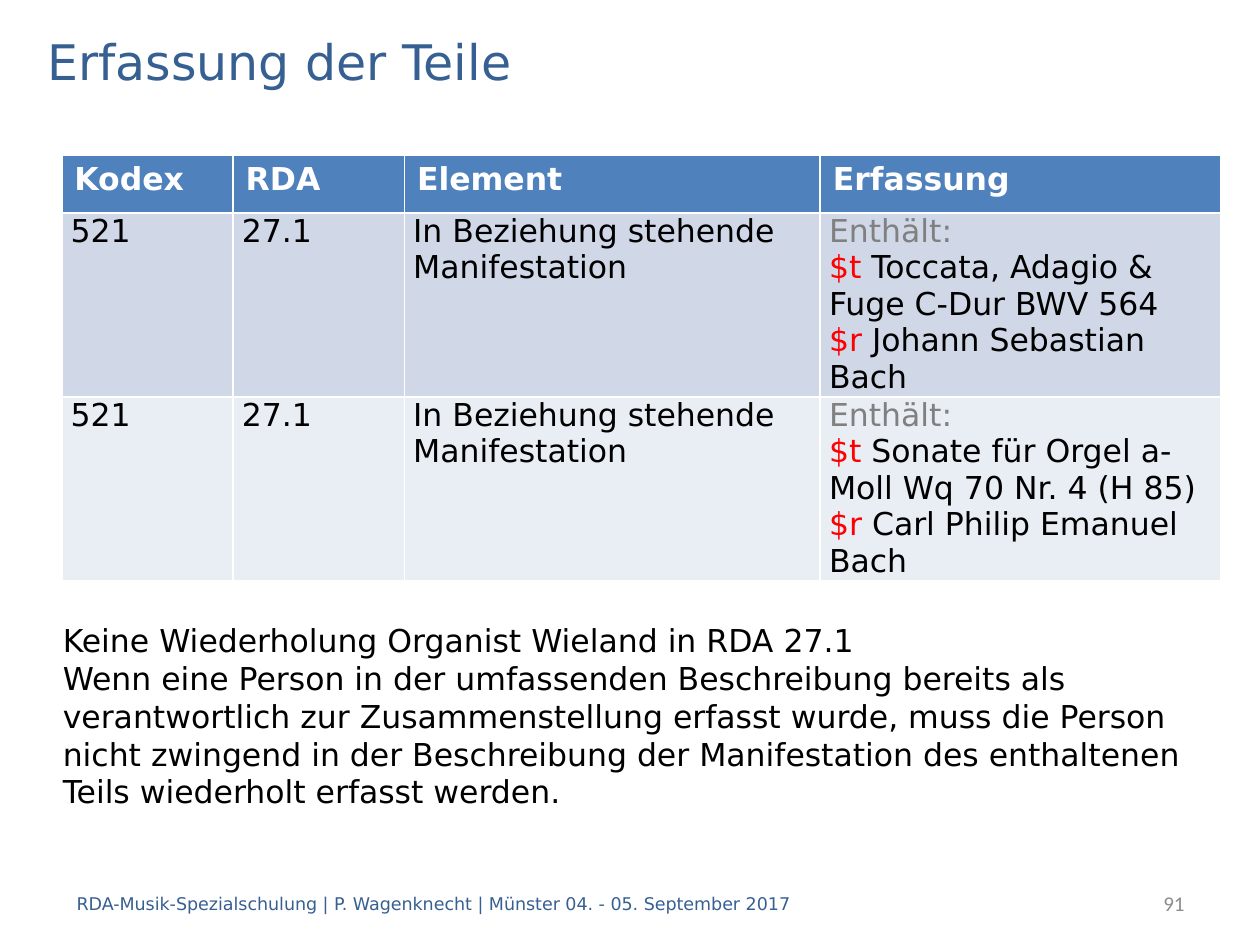
from pptx import Presentation
from pptx.dml.color import RGBColor
from pptx.enum import text
from pptx.util import Inches, Pt

FONT = "DejaVu Sans"
COLORS = {
    "title": "376092", "head": "4F81BD", "odd": "D0D8E8", "even": "E9EDF4",
    "white": "FFFFFF", "black": "000000", "gray": "808080", "code": "FF0000",
    "page": "8C8C8C",
}

TITLE = "Erfassung der Teile"
HEADS = ["Kodex", "RDA", "Element", "Erfassung"]
COMMON = ["521", "27.1", "In Beziehung stehende Manifestation"]
PARTS = [
    ("Toccata, Adagio & Fuge C-Dur BWV 564", "Johann Sebastian Bach"),
    ("Sonate für Orgel a-Moll Wq 70 Nr. 4 (H 85)", "Carl Philip Emanuel Bach"),
]
NOTES = [
    "Keine Wiederholung Organist Wieland in RDA 27.1",
    "Wenn eine Person in der umfassenden Beschreibung bereits als "
    "verantwortlich zur Zusammenstellung erfasst wurde, muss die Person "
    "nicht zwingend in der Beschreibung der Manifestation des enthaltenen "
    "Teils wiederholt erfasst werden.",
]
FOOTER = "RDA-Musik-Spezialschulung | P. Wagenknecht | Münster 04. - 05. September 2017"
PAGE = "91"

TABLE = (0.49, 1.23)
COLS = [1.36, 1.36, 3.3, 3.18]
ROWS = [0.46, 1.46, 1.46]


def rgb(name):
    return RGBColor.from_string(COLORS[name])


def write(frame, paras, size, color, font=FONT, bold=False, after=0):
    """Fill a frame; each paragraph is a string or a list of (text, color) runs."""
    for i, runs in enumerate(paras):
        para = frame.add_paragraph() if i else frame.paragraphs[0]
        para.font.size, para.font.name, para.font.bold = Pt(size), font, bold
        para.font.color.rgb = rgb(color)
        para.space_after = Pt(after)
        if isinstance(runs, str):
            runs = [(runs, color)]
        for words, tint in runs:
            run = para.add_run()
            run.text = words
            if tint != color:
                run.font.color.rgb = rgb(tint)


def add_text(slide, box, paras, size, color, font=FONT):
    frame = slide.shapes.add_textbox(*map(Inches, box)).text_frame
    frame.word_wrap = True
    frame.vertical_anchor = text.MSO_ANCHOR.MIDDLE
    write(frame, paras, size, color, font)
    return frame


def add_table(slide):
    dims = (*TABLE, sum(COLS), sum(ROWS))
    table = slide.shapes.add_table(
        len(ROWS), len(COLS), *map(Inches, dims)).table
    for col, width in zip(table.columns, COLS):
        col.width = Inches(width)
    for row, height in zip(table.rows, ROWS):
        row.height = Inches(height)

    for c, head in enumerate(HEADS):
        cell = table.cell(0, c)
        cell.fill.solid()
        cell.fill.fore_color.rgb = rgb("head")
        write(cell.text_frame, [head], 18, "white", bold=True)

    for r, (work, name) in enumerate(PARTS, 1):
        entry = [
            [("Enthält:", "gray")],
            [("$t ", "code"), (work, "black")],
            [("$r ", "code"), (name, "black")],
        ]
        for c, paras in enumerate([[item] for item in COMMON] + [entry]):
            cell = table.cell(r, c)
            cell.fill.solid()
            cell.fill.fore_color.rgb = rgb("odd" if r % 2 else "even")
            cell.margin_left = cell.margin_right = Inches(0.07)
            cell.margin_top = cell.margin_bottom = 0
            write(cell.text_frame, paras, 18, "black",
                  after=6 if c < len(COMMON) else 0)


def main():
    deck = Presentation()
    deck.slide_width, deck.slide_height = Inches(10), Inches(7.5)
    slide = deck.slides.add_slide(deck.slide_layouts[6])
    add_table(slide)
    add_text(slide, (0.28, 0.2, 9.45, 0.56), [TITLE], 28, "title")
    add_text(slide, (0.4, 4.54, 9.45, 2.28), NOTES, 18, "black")
    add_text(slide, (0.51, 6.97, 8.74, 0.4), [FOOTER], 10, "title")
    page = add_text(slide, (7.91, 6.97, 1.59, 0.4), [PAGE], 12, "page", "Calibri")
    page.paragraphs[0].alignment = text.PP_ALIGN.RIGHT
    deck.save("out.pptx")


if __name__ == "__main__":
    main()
